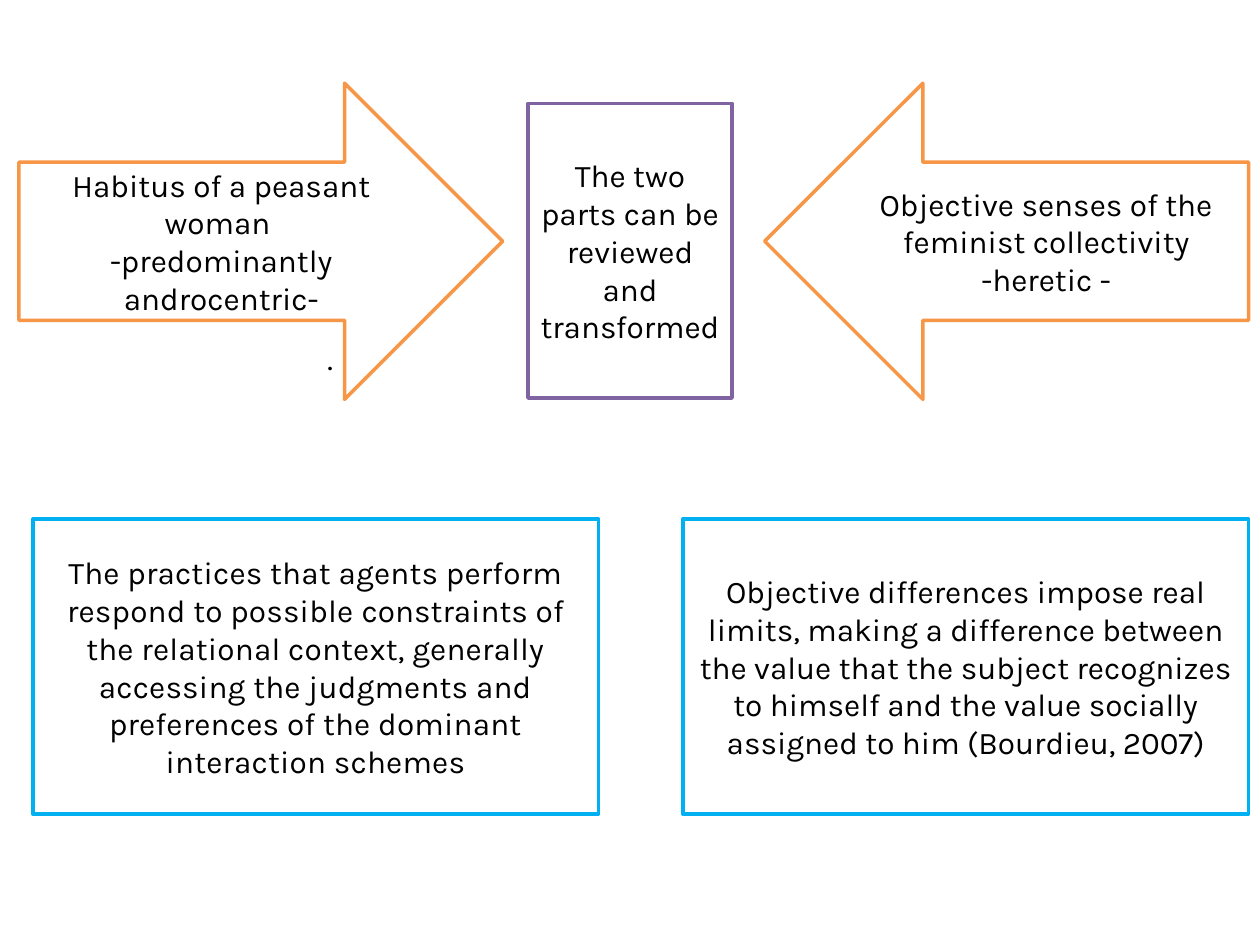
from pptx import Presentation
from pptx import util as u
from pptx.dml.color import RGBColor
from pptx.enum import shapes, text

COLORS = {"white": "FFFFFF", "black": "000000", "orange": "F79646",
          "purple": "8064A2", "blue": "00B0F0"}
FONT, SIZE = "Karla", 18

# Text: a list of paragraphs, each a list of (words, letter spacing in points)
HABITUS = [[("Habitus of a peasant woman ", 0)],
           [("-predominantly androcentric-", 0)]]
SENSES = [[("Objective senses of the feminist collectivity -heretic -", 0)]]
REVIEW = [[("The two parts can be reviewed and transformed", 0)]]
DOT = [[(".", 0.1)]]
AGENTS = [[("The practices that agents perform respond to possible ", 0.1),
           ("constraints", 0),
           (" of the relational context, generally accessing the judgments "
            "and preferences of the dominant interaction schemes", 0.1)]]
LIMITS = [[("Objective differences impose real limits, making a difference "
            "between the value that the subject recognizes to himself and "
            "the value socially assigned to him (Bourdieu, 2007)", 0)]]

ARROW = (3.84, 2.51)
CARD = (4.49, 2.34)
MID = (1.62, 2.34)
RIGHT = 9.91  # shared right edge of the second arrow and the second card
ARROW_TOP, MID_TOP, CARD_TOP = 0.66, 0.82, 4.12


def color(name):
    return RGBColor.from_string(COLORS[name])


def write(shape, paras, align=text.PP_ALIGN.CENTER,
          anchor=text.MSO_ANCHOR.MIDDLE):
    frame = shape.text_frame
    frame.word_wrap = True
    frame.vertical_anchor = anchor
    for i, runs in enumerate(paras):
        para = frame.paragraphs[0] if i == 0 else frame.add_paragraph()
        para.alignment = align
        for words, gap in runs:
            run = para.add_run()
            run.text = words
            run.font.name = FONT
            run.font.size = u.Pt(SIZE)
            run.font.color.rgb = color("black")
            if gap:
                run.font._element.set("spc", str(round(gap * 100)))


def panel(slide, kind, left, top, size, line, paras, flip=False):
    shape = slide.shapes.add_shape(
        kind, *(u.Inches(v) for v in (left, top, *size)))
    shape.shadow.inherit = False
    shape.fill.solid()
    shape.fill.fore_color.rgb = color("white")
    shape.line.color.rgb = color(line)
    shape.line.width = u.Pt(2)
    if flip:
        shape._element.spPr.xfrm.set("flipH", "1")
    write(shape, paras)


def main():
    prs = Presentation()
    prs.slide_width, prs.slide_height = u.Inches(10), u.Inches(7.5)
    slide = prs.slides.add_slide(prs.slide_layouts[6])
    kinds = shapes.MSO_SHAPE
    arrow, rect = kinds.RIGHT_ARROW, kinds.RECTANGLE

    panel(slide, arrow, 0.15, ARROW_TOP, ARROW, "orange", HABITUS)
    panel(slide, arrow, RIGHT - ARROW[0], ARROW_TOP, ARROW, "orange", SENSES,
          flip=True)
    panel(slide, rect, (10 - MID[0]) / 2, MID_TOP, MID, "purple", REVIEW)

    dot = slide.shapes.add_textbox(*(u.Inches(v) for v in (2.5, 2.64, 5, 0.4)))
    write(dot, DOT, align=text.PP_ALIGN.LEFT, anchor=text.MSO_ANCHOR.TOP)
    dot.text_frame.auto_size = text.MSO_AUTO_SIZE.SHAPE_TO_FIT_TEXT

    panel(slide, rect, 0.26, CARD_TOP, CARD, "blue", AGENTS)
    panel(slide, rect, RIGHT - CARD[0], CARD_TOP, CARD, "blue", LIMITS)
    prs.save("out.pptx")


if __name__ == "__main__":
    main()
